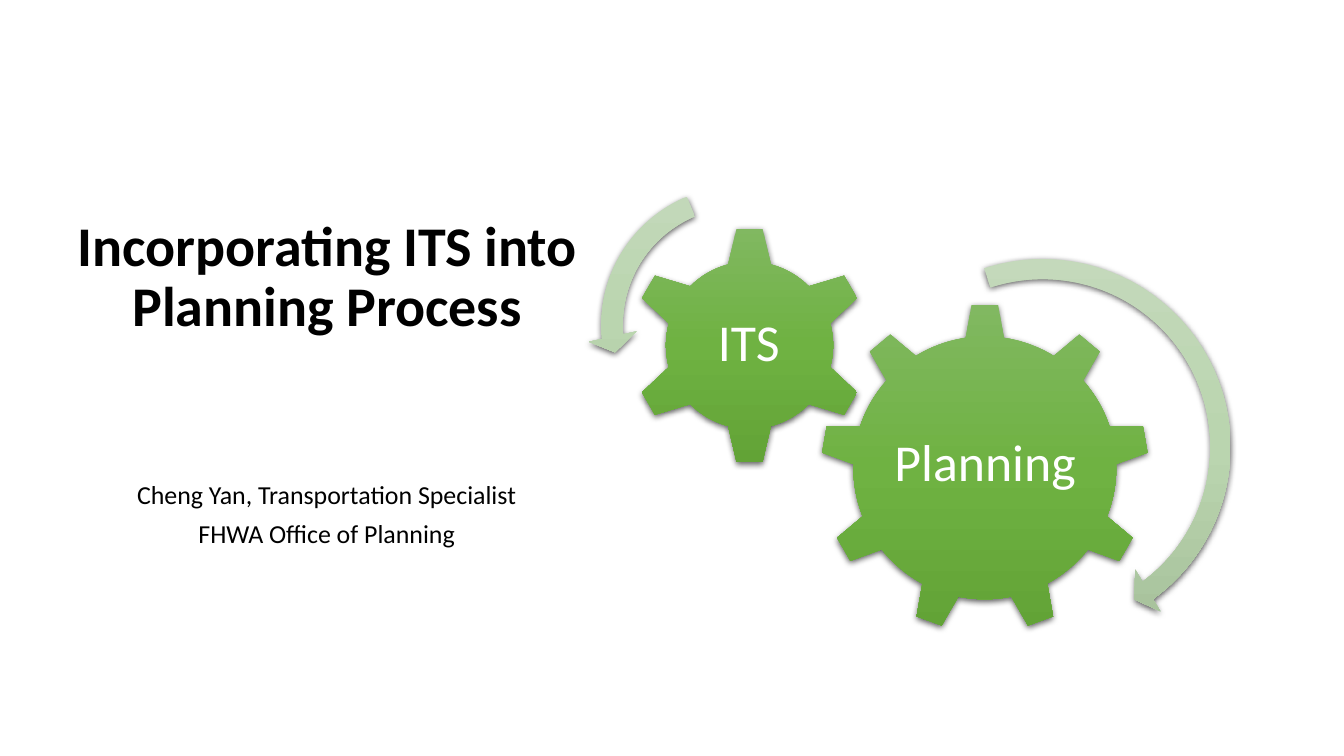
"""Build the title slide with two meshing gears and their turning arrows."""
from pptx import Presentation
from pptx.dml.color import RGBColor
from pptx.enum.shapes import MSO_SHAPE
from pptx.enum.text import MSO_ANCHOR, PP_ALIGN
from pptx.oxml import parse_xml
from pptx.oxml.ns import nsdecls, qn
from pptx.util import Cm, Pt

BLACK = RGBColor(0x00, 0x00, 0x00)
WHITE = RGBColor(0xFF, 0xFF, 0xFF)
GREEN = [RGBColor(0x81, 0xB8, 0x61), RGBColor(0x6F, 0xB2, 0x42), RGBColor(0x62, 0xA3, 0x36)]
PALE = [RGBColor(0xC4, 0xD9, 0xBB), RGBColor(0xBA, 0xD5, 0xAF), RGBColor(0xA5, 0xBF, 0x99)]

SHAPES = [
    (MSO_SHAPE.GEAR_9, 20.68, 7.65, 8.28, GREEN, []),
    (MSO_SHAPE.GEAR_6, 15.88, 5.69, 6.02, GREEN, []),
    (MSO_SHAPE.CIRCULAR_ARROW, 21.18, 6.17, 10.19, PALE,
     [0.05, 3.13, 32.24, 151.14, 0.06]),
    (MSO_SHAPE.LEFT_CIRCULAR_ARROW, 14.81, 4.34, 7.7, PALE,
     [0.07, 4.3, 104.89, 148.38, 0.08]),
]

TITLE = {"size": Pt(40), "bold": True, "color": BLACK}
BYLINE = {"size": Pt(18.5), "bold": False, "color": BLACK}
LABEL = {"size": Pt(37), "bold": False, "color": WHITE}
TEXTS = [
    (["Incorporating ITS into Planning Process"],
     (0.41, 5.26, 15.67, 3.4), TITLE, MSO_ANCHOR.BOTTOM, 0.9),
    (["Cheng Yan, Transportation Specialist", "FHWA Office of Planning"],
     (2.21, 12.09, 12.04, 1.91), BYLINE, MSO_ANCHOR.TOP, 0.8),
    (["Planning"], (22.35, 9.58, 4.95, 4.27), LABEL, MSO_ANCHOR.MIDDLE, 0.9),
    (["ITS"], (17.37, 7.21, 3, 2.97), LABEL, MSO_ANCHOR.MIDDLE, 0.9),
]


def shade(shape, tones):
    """Give a shape a vertical three-tone fill and a soft shadow below."""
    shape.fill.gradient()
    shape.fill.gradient_angle = 270
    shape.line.fill.background()
    shape.shadow.inherit = False
    props = shape.element.spPr
    stops = "".join(
        f'<a:gs pos="{i * 50000}"><a:srgbClr val="{tone}"/></a:gs>'
        for i, tone in enumerate(tones))
    old = props.find(".//" + qn("a:gsLst"))
    old.getparent().replace(
        old, parse_xml(f'<a:gsLst {nsdecls("a")}>{stops}</a:gsLst>'))
    props.find(qn("a:effectLst")).append(parse_xml(
        f'<a:outerShdw {nsdecls("a")} blurRad="{Pt(4.5)}" dist="{Pt(1.5)}" '
        'dir="5400000" algn="ctr" rotWithShape="0"><a:srgbClr val="000000">'
        '<a:alpha val="63000"/></a:srgbClr></a:outerShdw>'))


def write(slide, lines, place, style, anchor, pitch):
    """Add a centred text box."""
    frame = slide.shapes.add_textbox(*map(Cm, place)).text_frame
    frame.word_wrap = True
    frame.vertical_anchor = anchor
    if style is LABEL:
        for side in ("left", "top", "right", "bottom"):
            setattr(frame, f"margin_{side}", Cm(0.13))
    for i, line in enumerate(lines):
        para = frame.add_paragraph() if i else frame.paragraphs[0]
        para.alignment = PP_ALIGN.CENTER
        para.line_spacing = pitch
        if i:
            para.space_before = Pt(10)
        run = para.add_run()
        run.text = line
        run.font.name = "Calibri"
        for key, value in style.items():
            if key == "color":
                run.font.color.rgb = value
            else:
                setattr(run.font, key, value)


def main():
    """Draw the slide and save it."""
    deck = Presentation()
    deck.slide_width, deck.slide_height = Cm(33.87), Cm(19.05)
    slide = deck.slides.add_slide(deck.slide_layouts[6])
    for kind, left, top, size, tones, turns in SHAPES:
        shape = slide.shapes.add_shape(kind, Cm(left), Cm(top), Cm(size), Cm(size))
        for i, turn in enumerate(turns):
            shape.adjustments[i] = turn
        shade(shape, tones)
    for text in TEXTS:
        write(slide, *text)
    deck.save("out.pptx")


if __name__ == "__main__":
    main()
